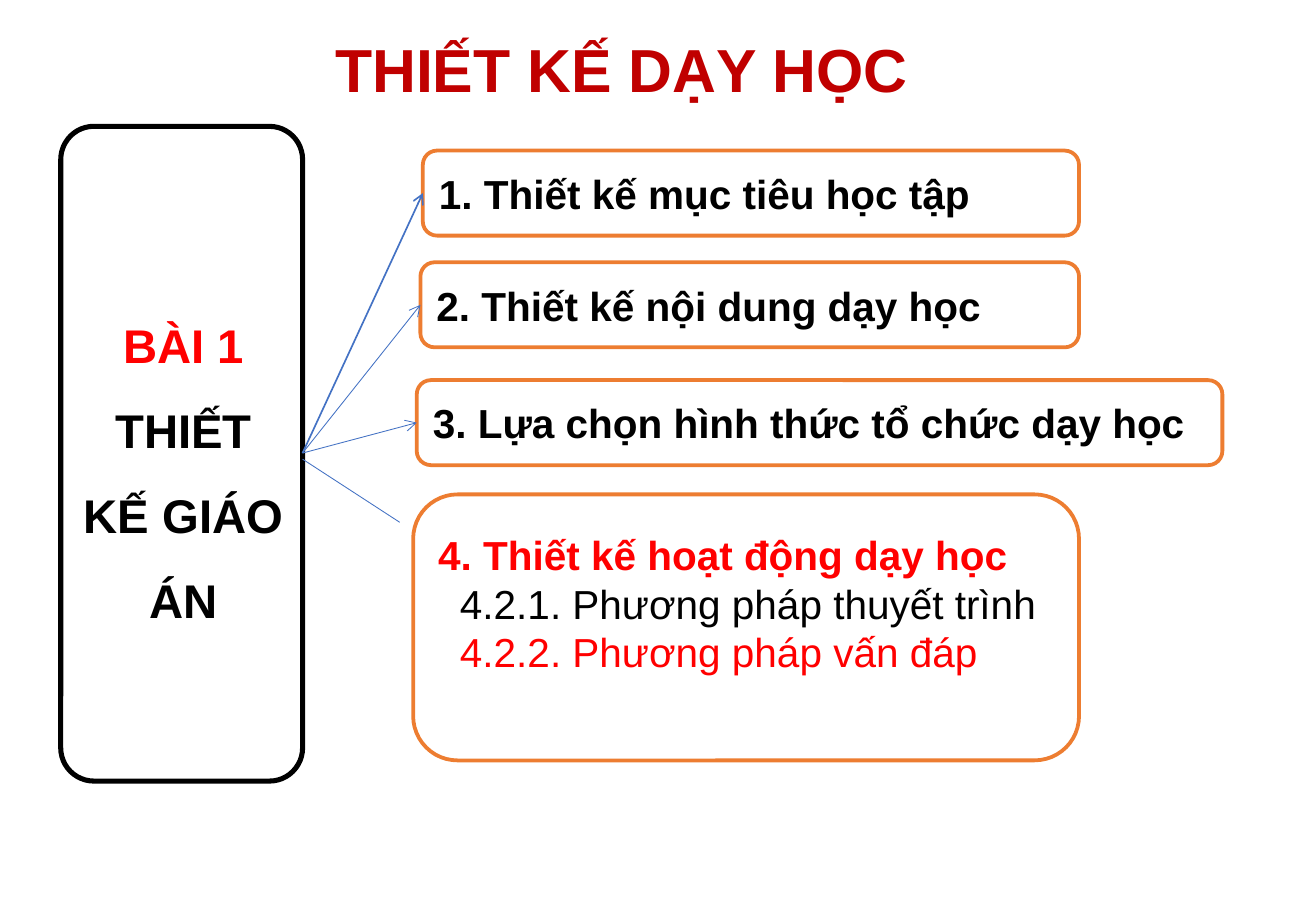
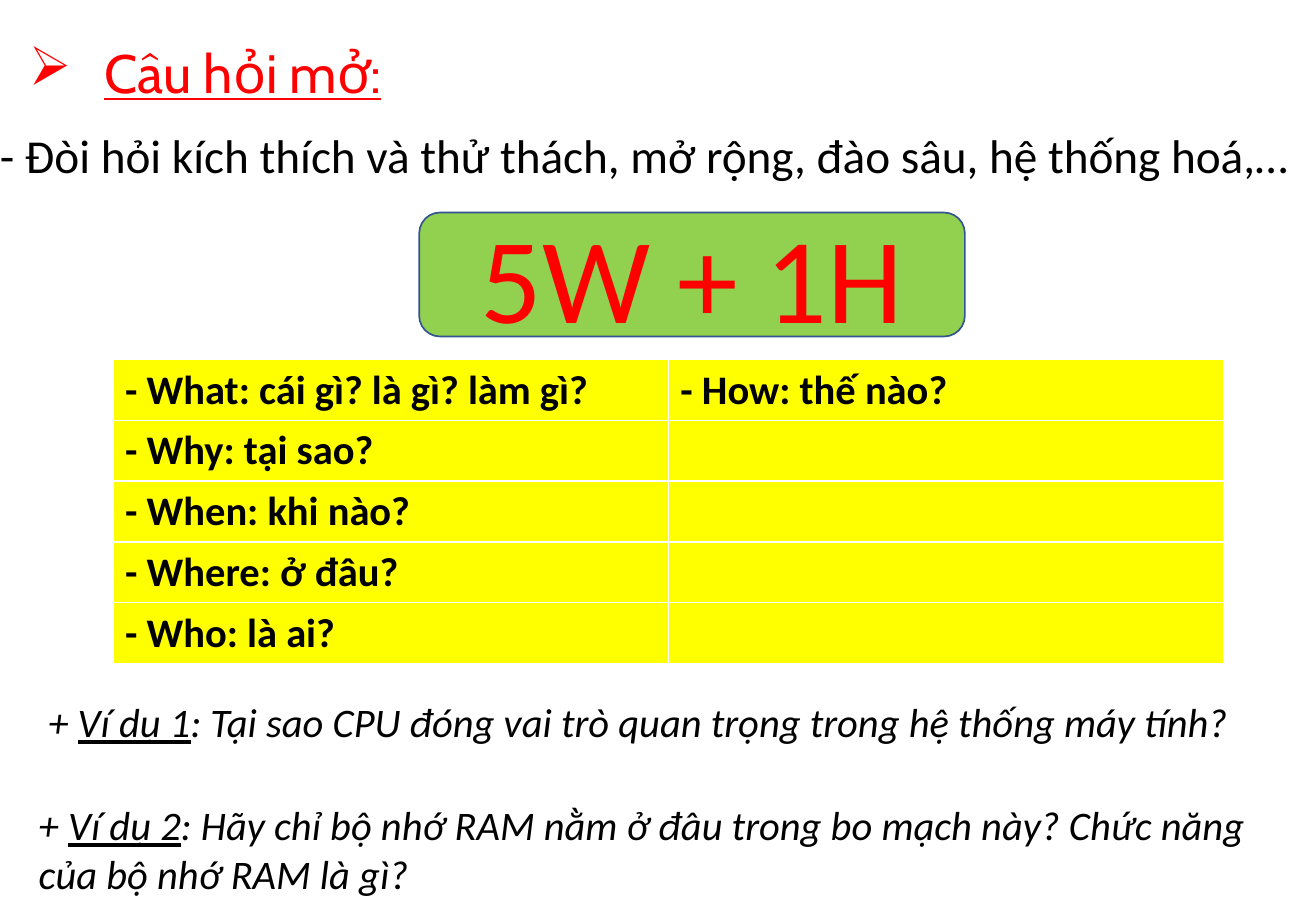
from lxml.etree import SubElement
from pptx import Presentation
from pptx.dml.color import RGBColor
from pptx.enum.shapes import MSO_CONNECTOR, MSO_SHAPE
from pptx.enum.text import MSO_ANCHOR, PP_ALIGN
from pptx.oxml.ns import qn
from pptx.util import Pt

PX = 9144  # EMU per px, 100 px to the inch
SLIDE_SIZE = (1083, 750)
COLORS = {
    "black": "000000", "white": "FFFFFF", "red": "FF0000", "dark_red": "C00000",
    "orange": "ED7D31", "blue": "4472C4", "navy": "325491",
    "green": "92D050", "yellow": "FFFF00",
}

# Slide 1
TITLE = "THIẾT KẾ DẠY HỌC"
LESSON = [("BÀI 1", "red"), ("THIẾT KẾ GIÁO ÁN", "black")]
LESSON_BOX = (50, 104, 199, 539)
HUB = (249, 373)
STEPS = [  # text, box, arrow width
    ("1. Thiết kế mục tiêu học tập", (348, 124, 540, 70), 1),
    ("2. Thiết kế nội dung dạy học", (346, 216, 542, 70), 0.5),
    ("3. Lựa chọn hình thức tổ chức dạy học", (343, 313, 663, 70), 0.5),
]
CURRENT_STEP = "4. Thiết kế hoạt động dạy học"
CURRENT_BOX = (340, 407, 548, 219)
METHODS = [("4.2.1. Phương pháp thuyết trình", "black"),
           ("4.2.2. Phương pháp vấn đáp", "red")]

# Slide 2
HEADING = "Câu hỏi mở:"
REQUIREMENT = "- Đòi hỏi kích thích và thử thách, mở rộng, đào sâu, hệ thống hoá,…"
FORMULA = "5W + 1H"
QUESTIONS = [
    ("- What: cái gì? là gì? làm gì?", "- How: thế nào?"),
    ("- Why: tại sao?", ""),
    ("- When: khi nào?", ""),
    ("- Where: ở đâu?", ""),
    ("- Who: là ai?", ""),
]
TABLE_AT, COL_W, ROW_H = (93, 296), 457, 50
EXAMPLES = [
    ("Ví dụ 1", ": Tại sao CPU đóng vai trò quan trọng trong hệ thống máy tính?",
     (30, 569, 991, 91)),
    ("Ví dụ 2", ": Hãy chỉ bộ nhớ RAM nằm ở đâu trong bo mạch này? "
     "Chức năng của bộ nhớ RAM là gì?", (22, 654, 1032, 91)),
]


def emu(lengths):
    return [n * PX for n in lengths]


def rgb(name):
    return RGBColor.from_string(COLORS[name])


def add_run(p, text, size, color="black", font="Arial", **style):
    r = p.add_run()
    r.text = text
    r.font.size, r.font.name = Pt(size), font
    r.font.color.rgb = rgb(color)
    for name, value in style.items():
        setattr(r.font, name, value)


def add_text(s, box, wrap=True):
    tf = s.shapes.add_textbox(*emu(box)).text_frame
    tf.word_wrap = wrap
    return tf


def add_round_box(s, box, line, width, fill=None, adj=0.167, wrap=True):
    sp = s.shapes.add_shape(MSO_SHAPE.ROUNDED_RECTANGLE, *emu(box))
    sp.shadow.inherit = False
    sp.adjustments[0] = adj
    if fill:
        sp.fill.solid()
        sp.fill.fore_color.rgb = rgb(fill)
    else:
        sp.fill.background()
    sp.line.color.rgb, sp.line.width = rgb(line), Pt(width)
    tf = sp.text_frame
    tf.word_wrap, tf.vertical_anchor = wrap, MSO_ANCHOR.MIDDLE
    tf.paragraphs[0].alignment = PP_ALIGN.LEFT
    return tf


def add_step_box(s, box, text, color="black"):
    tf = add_round_box(s, box, "orange", 2.25, "white", wrap=False)
    add_run(tf.paragraphs[0], text, 24, color, bold=True)
    return tf


def add_link(s, start, end, width, arrow=True):
    c = s.shapes.add_connector(MSO_CONNECTOR.STRAIGHT, *emu(start + end))
    c.line.color.rgb, c.line.width = rgb("blue"), Pt(width)
    if arrow:
        SubElement(c.line._get_or_add_ln(), qn("a:tailEnd"), type="arrow")
    SubElement(c._element.spPr, qn("a:effectLst"))


def set_indent(p, left, first=0):
    pPr = p._p.get_or_add_pPr()
    pPr.set("marL", str(left * PX))
    pPr.set("indent", str(first * PX))
    return pPr


def build_outline(s):
    add_round_box(s, LESSON_BOX, "black", 3, adj=0.137)
    tf = add_text(s, (53, 232, 196, 293))
    for i, (text, color) in enumerate(LESSON):
        p = tf.add_paragraph() if i else tf.paragraphs[0]
        p.alignment, p.line_spacing = PP_ALIGN.CENTER, 1.5
        add_run(p, text, 28, color, bold=True)

    for text, box, width in STEPS:
        add_step_box(s, box, text)
        left, top, _, height = box
        add_link(s, HUB, (left, top + height // 2), width)

    tf = add_step_box(s, CURRENT_BOX, CURRENT_STEP, "red")
    tf.margin_bottom = 45 * PX
    for text, color in METHODS:
        p = tf.add_paragraph()
        p.alignment = PP_ALIGN.LEFT
        set_indent(p, 18)
        add_run(p, text, 24, color)
    add_link(s, (249, 378), (329, 430), 0.5, arrow=False)

    tf = add_text(s, (266, 21, 496, 71), wrap=False)
    add_run(tf.paragraphs[0], TITLE, 36, "dark_red", bold=True)


def build_open_questions(s):
    tf = add_text(s, (14, 13, 525, 99))
    tf.vertical_anchor = MSO_ANCHOR.MIDDLE
    p = tf.paragraphs[0]
    p.alignment, p.line_spacing = PP_ALIGN.JUSTIFY, 0.9
    SubElement(set_indent(p, 62, -62), qn("a:buChar"), char="➢")
    add_run(p, HEADING, 32, "red", "Cabin", underline=True)

    tf = add_text(s, (-10, 99, 1095, 57))
    add_run(tf.paragraphs[0], REQUIREMENT, 28, font="Calibri")

    tf = add_round_box(s, (345, 175, 449, 102), "navy", 1, "green")
    tf.paragraphs[0].alignment = PP_ALIGN.CENTER
    add_run(tf.paragraphs[0], FORMULA, 72, "red", "Calibri")

    rows, cols = len(QUESTIONS), len(QUESTIONS[0])
    size = (cols * COL_W, rows * ROW_H)
    table = s.shapes.add_table(rows, cols, *emu(TABLE_AT + size)).table
    for i, row in enumerate(QUESTIONS):
        for j, text in enumerate(row):
            cell = table.cell(i, j)
            cell.fill.solid()
            cell.fill.fore_color.rgb = rgb("yellow")
            if text:
                add_run(cell.text_frame.paragraphs[0], text, 24,
                        font="Calibri", bold=True)

    for label, text, box in EXAMPLES:
        p = add_text(s, box).paragraphs[0]
        for part, underline in (("+ ", False), (label, True), (text, False)):
            add_run(p, part, 24, font="Calibri", italic=True, underline=underline)


def main():
    prs = Presentation()
    prs.slide_width, prs.slide_height = emu(SLIDE_SIZE)
    for build in (build_outline, build_open_questions):
        build(prs.slides.add_slide(prs.slide_layouts[6]))
    prs.save("out.pptx")


if __name__ == "__main__":
    main()
